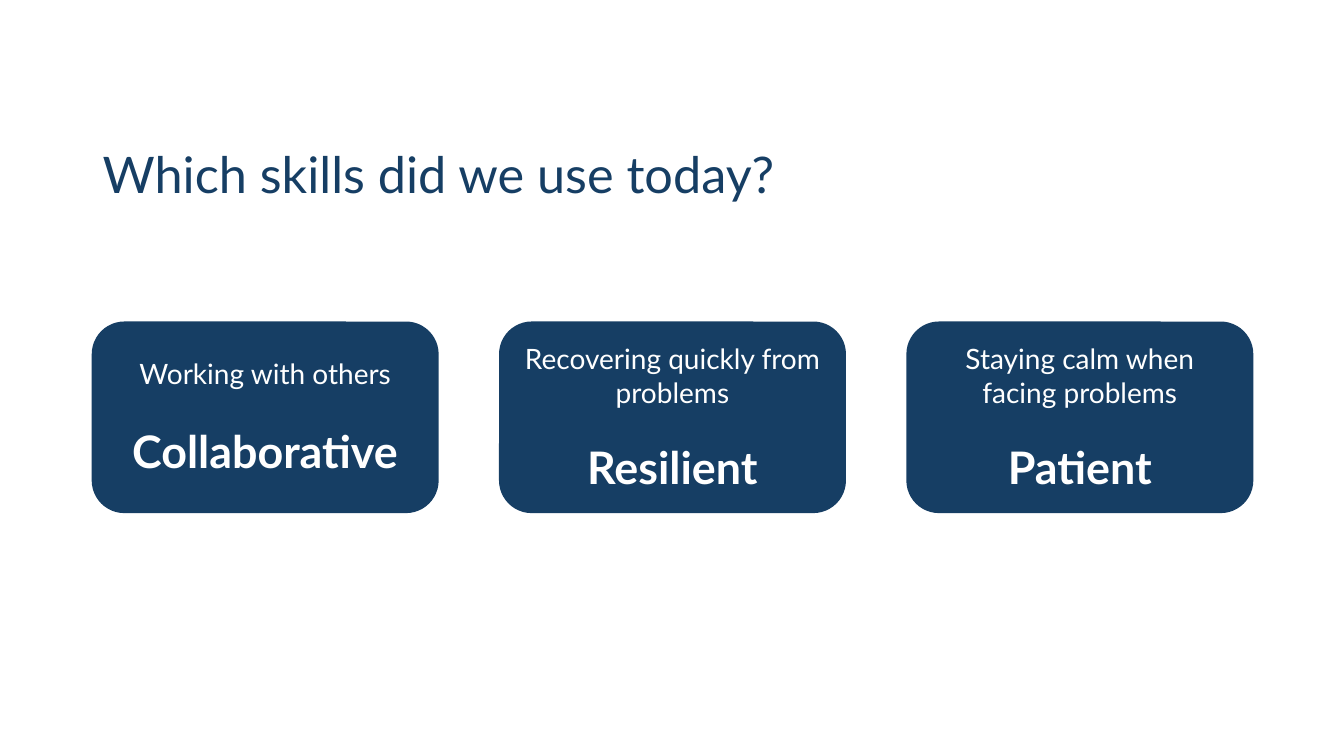
from pptx import Presentation
from pptx.dml.color import RGBColor
from pptx.enum.shapes import MSO_SHAPE as Shape
from pptx.enum.text import MSO_ANCHOR as Anchor, PP_ALIGN as Align
from pptx.util import Inches, Pt

NAVY, WHITE = "163E64", "FFFFFF"
MARGIN, CARD_TOP = 0.92, 3.2
CARD_WIDTH, CARD_HEIGHT, CARD_STEP = 3.42, 1.88, 4.04

# meaning, skill, points between the two
SKILLS = [
    ("Working with others", "Collaborative", 24),
    ("Recovering quickly from problems", "Resilient", 22),
    ("Staying calm when facing problems", "Patient", 22),
]


def color(value):
    return RGBColor.from_string(value)


class SkillsPage:
    def __init__(self, page, font="Lato"):
        self.page = page
        self.font = font

    def add_span(self, para, text, size, ink, bold=False):
        span = para.add_run()
        span.text = text
        span.font.name = self.font
        span.font.size = Pt(size)
        span.font.bold = bold
        span.font.color.rgb = color(ink)

    def add_title(self, text, left, top, width, height):
        box = self.page.shapes.add_textbox(
            Inches(left), Inches(top), Inches(width), Inches(height))
        frame = box.text_frame
        frame.word_wrap = True
        frame.vertical_anchor = Anchor.MIDDLE
        para = frame.paragraphs[0]
        para.line_spacing = 0.9
        self.add_span(para, text, 36, NAVY)

    def add_card(self, meaning, skill, gap, left, top, width, height):
        card = self.page.shapes.add_shape(
            Shape.ROUNDED_RECTANGLE,
            Inches(left), Inches(top), Inches(width), Inches(height))
        card.shadow.inherit = False
        card.fill.solid()
        card.fill.fore_color.rgb = color(NAVY)
        card.line.color.rgb = color(NAVY)
        card.line.width = Pt(1.5)

        frame = card.text_frame
        frame.word_wrap = True
        frame.vertical_anchor = Anchor.MIDDLE
        upper, lower = frame.paragraphs[0], frame.add_paragraph()
        upper.alignment = lower.alignment = Align.CENTER
        lower.space_before = Pt(gap)
        self.add_span(upper, meaning, 20, WHITE)
        self.add_span(lower, skill, 32, WHITE, bold=True)


def main():
    deck = Presentation()
    deck.slide_width, deck.slide_height = Inches(13.33), Inches(7.5)
    skills_page = SkillsPage(deck.slides.add_slide(deck.slide_layouts[6]))
    skills_page.add_title("Which skills did we use today?", MARGIN, 1.3, 11.5, 0.92)
    for index, (meaning, skill, gap) in enumerate(SKILLS):
        skills_page.add_card(meaning, skill, gap, MARGIN + index * CARD_STEP,
                             CARD_TOP, CARD_WIDTH, CARD_HEIGHT)
    deck.save("out.pptx")


if __name__ == "__main__":
    main()
